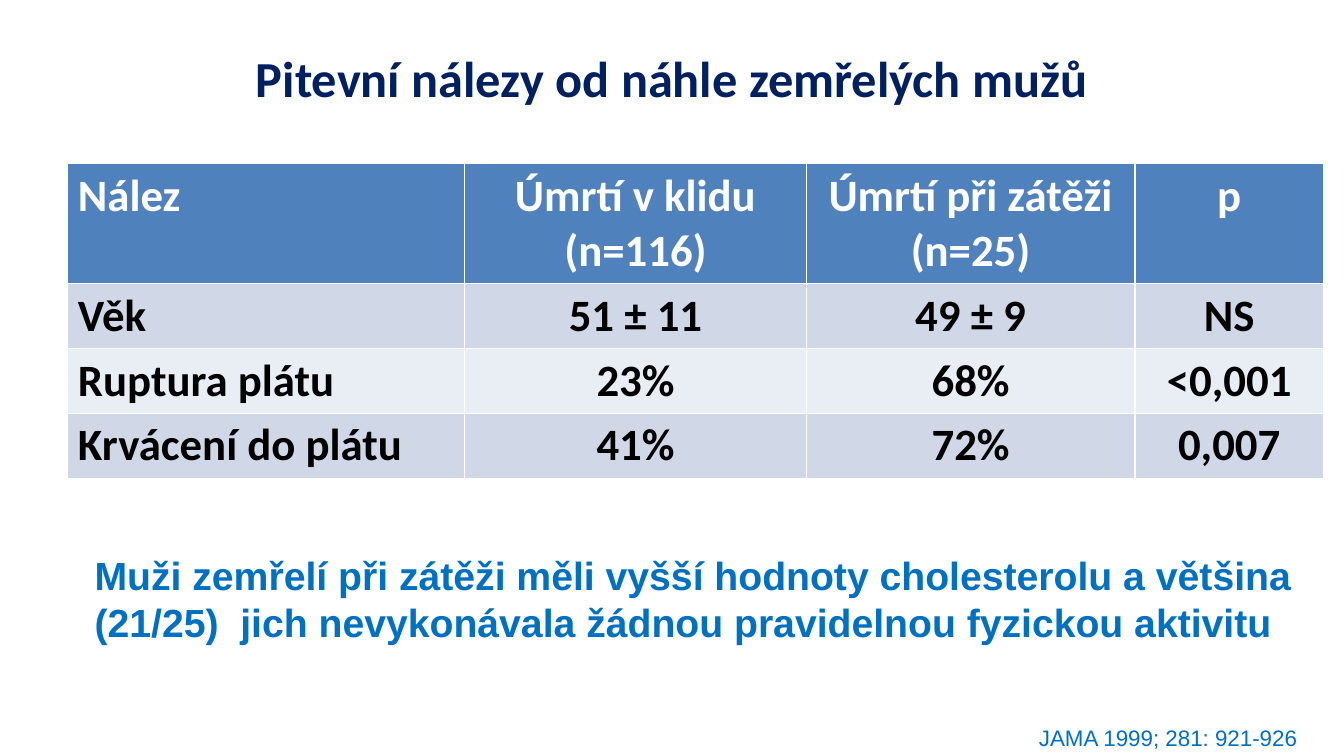
from pptx import Presentation
from pptx.dml.color import RGBColor
from pptx.enum.text import MSO_ANCHOR, PP_ALIGN
from pptx.util import Pt

LEFT, CENTER = PP_ALIGN.LEFT, PP_ALIGN.CENTER
MIDDLE = MSO_ANCHOR.MIDDLE

TITLE = "Pitevní nálezy od náhle zemřelých mužů"
FINDINGS = [
    ("Nález", "Úmrtí v klidu\n(n=116)", "Úmrtí při zátěži\n(n=25)", "p"),
    ("Věk", "51 ± 11", "49 ± 9", "NS"),
    ("Ruptura plátu", "23%", "68%", "<0,001"),
    ("Krvácení do plátu", "41%", "72%", "0,007"),
]
CONCLUSION = (
    "Muži zemřelí při zátěži měli vyšší hodnoty cholesterolu a většina "
    "(21/25)  jich nevykonávala žádnou pravidelnou fyzickou aktivitu"
)
CITATION = "JAMA 1999; 281: 921-926"

THEME = {
    "heading_font": "Calibri", "note_font": "Arial",
    "title": "002060", "note": "0070C0", "header_text": "FFFFFF", "cell_text": "000000",
    "header_fill": "4F81BD", "bands": ("E9EDF4", "D0D8E8"),
    "title_size": 36, "table_size": 32, "conclusion_size": 28, "citation_size": 16,
}
COLUMN_WIDTHS = (283.5, 244, 234.75, 134.75)
HEADER_HEIGHT, ROW_HEIGHT = 85, 46.25


def write(frame, text, font, size, color, bold=True, align=LEFT):
    for index, line in enumerate(text.split("\n")):
        para = frame.paragraphs[0] if index == 0 else frame.add_paragraph()
        para.alignment = align
        span = para.add_run()
        span.text = line
        span.font.name = font
        span.font.size = Pt(size)
        span.font.bold = bold
        span.font.color.rgb = RGBColor.from_string(color)


def points(*lengths):
    return [Pt(length) for length in lengths]


deck = Presentation()
deck.slide_width, deck.slide_height = points(960, 540)
page = deck.slides.add_slide(deck.slide_layouts[5])

title = page.shapes.title
title.left, title.top, title.width, title.height = points(48, 10, 864, 90)
title.text_frame.vertical_anchor = MIDDLE
write(title.text_frame, TITLE, THEME["heading_font"], THEME["title_size"],
      THEME["title"], align=CENTER)

table_height = HEADER_HEIGHT + ROW_HEIGHT * (len(FINDINGS) - 1)
table = page.shapes.add_table(
    len(FINDINGS), len(COLUMN_WIDTHS),
    *points(48.5, 117, sum(COLUMN_WIDTHS), table_height),
).table
for column, width in zip(table.columns, COLUMN_WIDTHS):
    column.width = Pt(width)
for row_index, findings in enumerate(FINDINGS):
    is_header = row_index == 0
    table.rows[row_index].height = Pt(HEADER_HEIGHT if is_header else ROW_HEIGHT)
    fill = THEME["header_fill"] if is_header else THEME["bands"][row_index % 2]
    color = THEME["header_text"] if is_header else THEME["cell_text"]
    for column_index, text in enumerate(findings):
        cell = table.cell(row_index, column_index)
        cell.fill.solid()
        cell.fill.fore_color.rgb = RGBColor.from_string(fill)
        write(cell.text_frame, text, THEME["heading_font"], THEME["table_size"], color,
              align=CENTER if column_index else LEFT)

citation = page.shapes.add_textbox(*points(735, 513.5, 201.5, 26.5))
citation.text_frame.word_wrap = False
write(citation.text_frame, CITATION, THEME["note_font"], THEME["citation_size"],
      THEME["note"], bold=False)

conclusion = page.shapes.add_textbox(*points(60.5, 390.5, 884, 75))
conclusion.text_frame.word_wrap = True
write(conclusion.text_frame, CONCLUSION, THEME["note_font"], THEME["conclusion_size"],
      THEME["note"])

deck.save("out.pptx")
